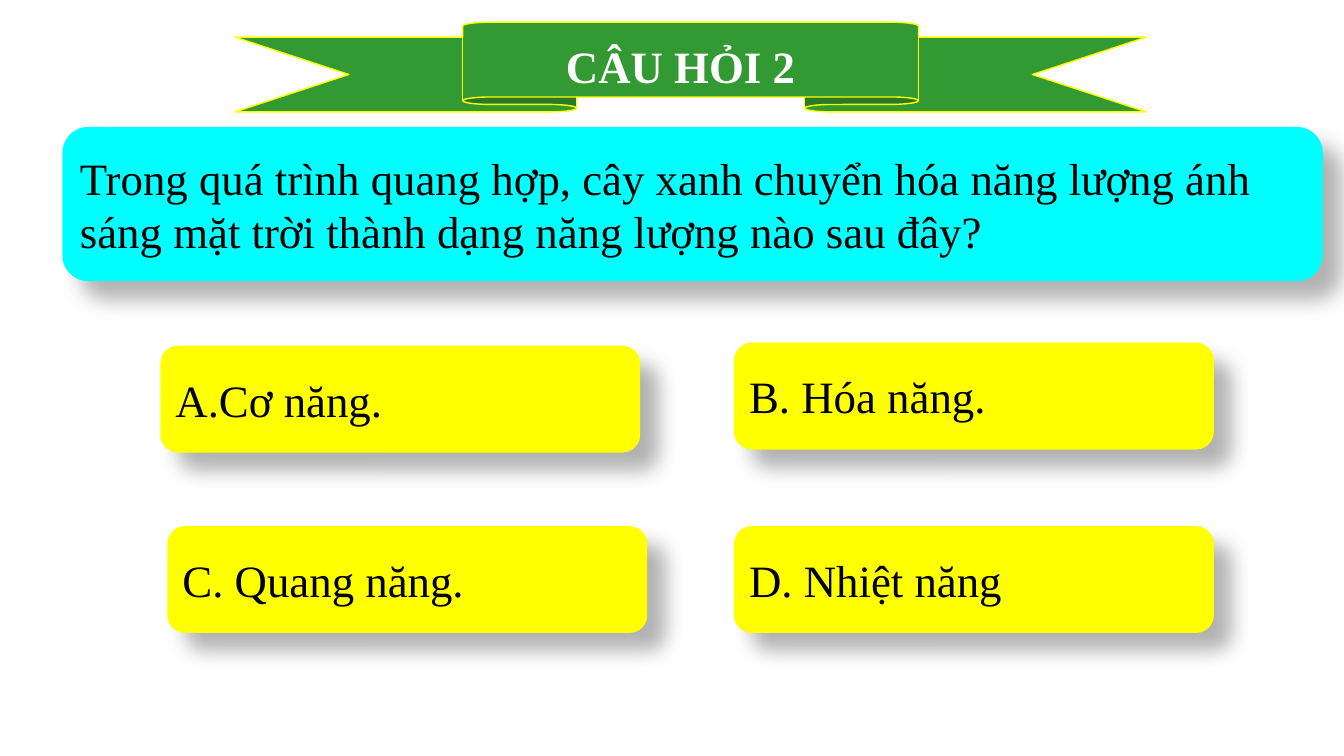
from dataclasses import dataclass

from lxml import etree
from pptx import Presentation
from pptx.dml.color import RGBColor
from pptx.enum.shapes import MSO_SHAPE as Shape
from pptx.enum.text import MSO_ANCHOR as Anchor, MSO_AUTO_SIZE as AutoSize, PP_ALIGN as Align
from pptx.oxml.ns import qn
from pptx.util import Inches, Pt


@dataclass(frozen=True)
class Theme:
    font: str = "Times New Roman"
    size: Pt = Pt(32)
    ribbon: RGBColor = RGBColor(0x33, 0x99, 0x33)
    question: RGBColor = RGBColor(0x00, 0xFF, 0xFF)
    yellow: RGBColor = RGBColor(0xFF, 0xFF, 0x00)
    light: RGBColor = RGBColor(0xFF, 0xFF, 0xFF)
    dark: RGBColor = RGBColor(0x00, 0x00, 0x00)


theme = Theme()


def write(frame, text, color, align, bold=False):
    frame.word_wrap = True
    frame.vertical_anchor = Anchor.MIDDLE
    frame.text = text
    para = frame.paragraphs[0]
    para.alignment = align
    para.font.name = theme.font
    para.font.size = theme.size
    para.font.bold = bold
    para.font.color.rgb = color


def add_card(page, place, text, fill, align):
    """Add a rounded text card that casts a soft shadow to the lower right."""
    card = page.shapes.add_shape(Shape.ROUNDED_RECTANGLE, *map(Inches, place))
    card.fill.solid()
    card.fill.fore_color.rgb = fill
    card.line.fill.background()
    card.shadow.inherit = False
    effects = card._element.spPr.find(qn("a:effectLst"))
    shadow = etree.SubElement(effects, qn("a:outerShdw"), blurRad=str(Pt(15)),
                              dist=str(Pt(18)), dir=str(45 * 60000),
                              algn="tl", rotWithShape="0")
    tint = etree.SubElement(shadow, qn("a:srgbClr"), val=str(theme.dark))
    etree.SubElement(tint, qn("a:alpha"), val="30000")
    write(card.text_frame, text, theme.dark, align)


deck = Presentation()
deck.slide_width, deck.slide_height = Inches(13.33), Inches(7.5)
page = deck.slides.add_slide(deck.slide_layouts.get_by_name("Title Only"))

# Heading on its ribbon
ribbon = page.shapes.add_shape(Shape.UP_RIBBON, Inches(2.33), Inches(0.22),
                               Inches(9.04), Inches(0.89))
ribbon.fill.solid()
ribbon.fill.fore_color.rgb = theme.ribbon
ribbon.line.color.rgb = theme.yellow
ribbon.line.width = Pt(1)
ribbon.shadow.inherit = False

title = page.shapes.title
title.left, title.top = Inches(4.52), Inches(0.33)
title.width, title.height = Inches(4.46), Inches(0.64)
write(title.text_frame, "CÂU HỎI 2", theme.light, Align.CENTER, bold=True)
title.text_frame.auto_size = AutoSize.SHAPE_TO_FIT_TEXT
ribbon._element.addnext(title._element)

# Question
add_card(page, (0.62, 1.26, 12.5, 1.53),
         "Trong quá trình quang hợp, cây xanh chuyển hóa năng lượng ánh sáng "
         "mặt trời thành dạng năng lượng nào sau đây?",
         theme.question, Align.LEFT)

# Answers
answers = [
    (1.59, 3.43, "A.Cơ năng."),
    (7.28, 3.4, "B. Hóa năng."),
    (1.66, 5.22, "C. Quang năng."),
    (7.28, 5.22, "D. Nhiệt năng"),
]
for left, top, answer in answers:
    add_card(page, (left, top, 4.76, 1.06), answer, theme.yellow, Align.JUSTIFY)

deck.save("out.pptx")
